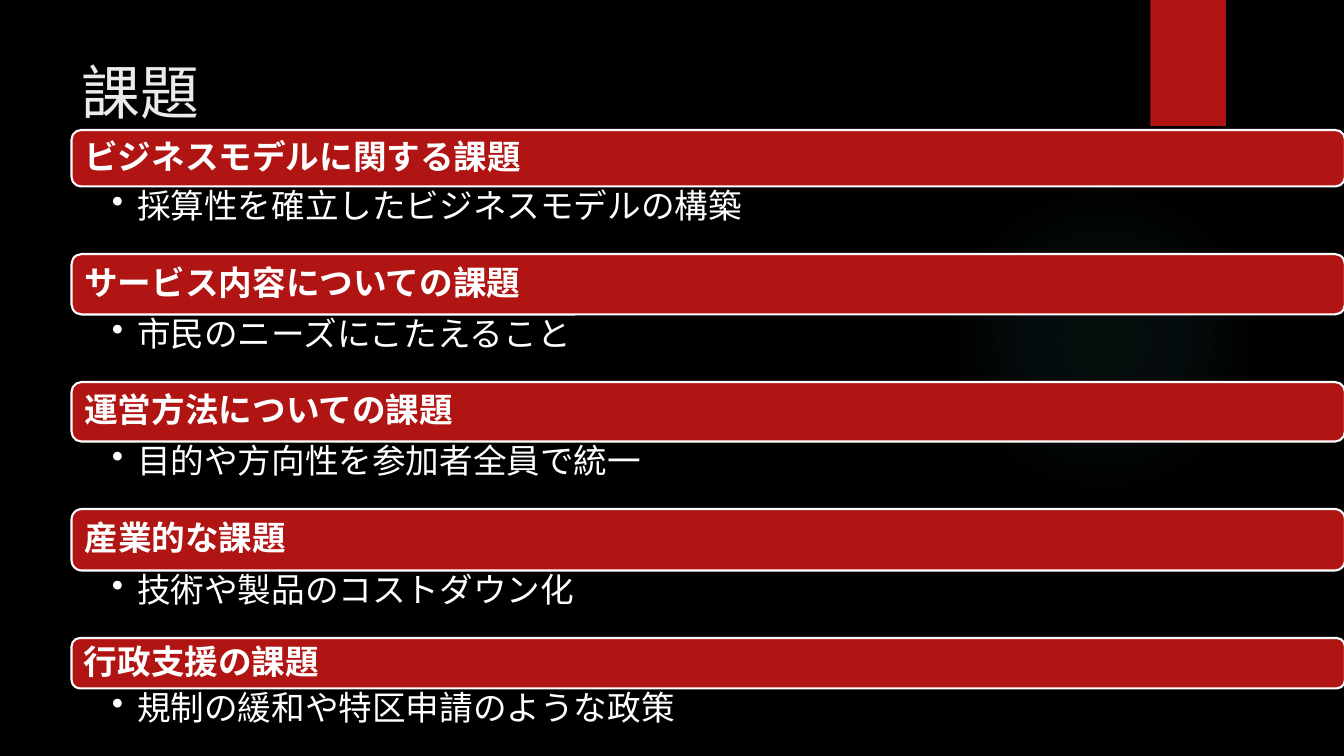
"""Build a slide that lists five groups of issues as red bands with a bullet under each."""
from lxml import etree
from pptx import Presentation
from pptx import util as u
from pptx.dml.color import RGBColor
from pptx.enum import shapes, text
from pptx.oxml import ns

COLORS = {"back": "000000", "red": "B01513", "white": "FFFFFF", "title": "EBEBEB", "glow": "50B9C1"}
FONT = "TeX Gyre Adventor"
LEFT, BAND_WIDTH, FIRST_TOP, BULLET_HEIGHT = 0.71, 12.63, 1.29, 0.67
INDENT = u.Inches(0.25)
ISSUES = [
    ("ビジネスモデルに関する課題", "採算性を確立したビジネスモデルの構築", 0.56),
    ("サービス内容についての課題", "市民のニーズにこたえること", 0.6),
    ("運営方法についての課題", "目的や方向性を参加者全員で統一", 0.59),
    ("産業的な課題", "技術や製品のコストダウン化", 0.61),
    ("行政支援の課題", "規制の緩和や特区申請のような政策", 0.5),
]


def add_block(kind, left, top, width, height, fill=None, line=None):
    block = page.shapes.add_shape(kind, *map(u.Inches, (left, top, width, height)))
    block.shadow.inherit = False
    if fill:
        block.fill.solid()
        block.fill.fore_color.rgb = RGBColor.from_string(COLORS[fill])
    if line:
        block.line.color.rgb = RGBColor.from_string(COLORS[line])
        block.line.width = u.Pt(1.5)
    else:
        block.line.fill.background()
    return block


def write(box, words, size=24, color="white", bold=False, bullet=False,
          insets=(0.1, 0.05, 0.1, 0.05), anchor=text.MSO_ANCHOR.TOP, spacing=0.9):
    frame = box.text_frame
    frame.word_wrap = True
    frame.vertical_anchor = anchor
    frame.margin_left, frame.margin_top, frame.margin_right, frame.margin_bottom = map(u.Inches, insets)
    para = frame.paragraphs[0]
    para.alignment = text.PP_ALIGN.LEFT
    para.line_spacing = spacing
    if bullet:
        para.level = 1
        settings = para._p.get_or_add_pPr()
        settings.set("marL", str(INDENT))
        settings.set("indent", str(-INDENT))
        etree.SubElement(settings, ns.qn("a:buChar"), char="•")
    span = para.add_run()
    span.text = words
    span.font.name = FONT
    span.font.size = u.Pt(size)
    span.font.bold = bold
    span.font.color.rgb = RGBColor.from_string(COLORS[color])


deck = Presentation()
deck.slide_width, deck.slide_height = u.Inches(13.33), u.Inches(7.5)
page = deck.slides.add_slide(deck.slide_layouts[6])
page.background.fill.solid()
page.background.fill.fore_color.rgb = RGBColor.from_string(COLORS["back"])

glow = add_block(shapes.MSO_SHAPE.OVAL, 9.41, 1.83, 3.08, 3.08)
glow.fill.gradient()
gradient = glow._element.spPr.find(ns.qn("a:gradFill"))
for child in list(gradient):
    gradient.remove(child)
stops = etree.SubElement(gradient, ns.qn("a:gsLst"))
for position, opacity in ((0, 7), (36, 6), (69, 0), (100, 0)):
    stop = etree.SubElement(stops, ns.qn("a:gs"), pos=str(position * 1000))
    tint = etree.SubElement(stop, ns.qn("a:srgbClr"), val=COLORS["glow"])
    etree.SubElement(tint, ns.qn("a:alpha"), val=str(opacity * 1000))
circle = etree.SubElement(gradient, ns.qn("a:path"), path="circle")
etree.SubElement(circle, ns.qn("a:fillToRect"), l="50000", t="50000", r="50000", b="50000")

add_block(shapes.MSO_SHAPE.RECTANGLE, 11.41, 0, 0.75, 1.25, fill="red")
title = page.shapes.add_textbox(*map(u.Inches, (LEFT, 0.5, 10.29, 1.53)))
write(title, "課題", size=42, color="title", spacing=1.0)

top = FIRST_TOP
for heading, detail, height in ISSUES:
    band = add_block(shapes.MSO_SHAPE.ROUNDED_RECTANGLE, LEFT, top, BAND_WIDTH, height,
                     fill="red", line="white")
    write(band, heading, bold=True, insets=(0.1, 0, 0.1, 0), anchor=text.MSO_ANCHOR.MIDDLE)
    top += height
    note = page.shapes.add_textbox(*map(u.Inches, (LEFT, top, BAND_WIDTH, BULLET_HEIGHT)))
    write(note, detail, bullet=True, insets=(0.4, 0.03, 0.19, 0.03))
    top += BULLET_HEIGHT

deck.save("out.pptx")
